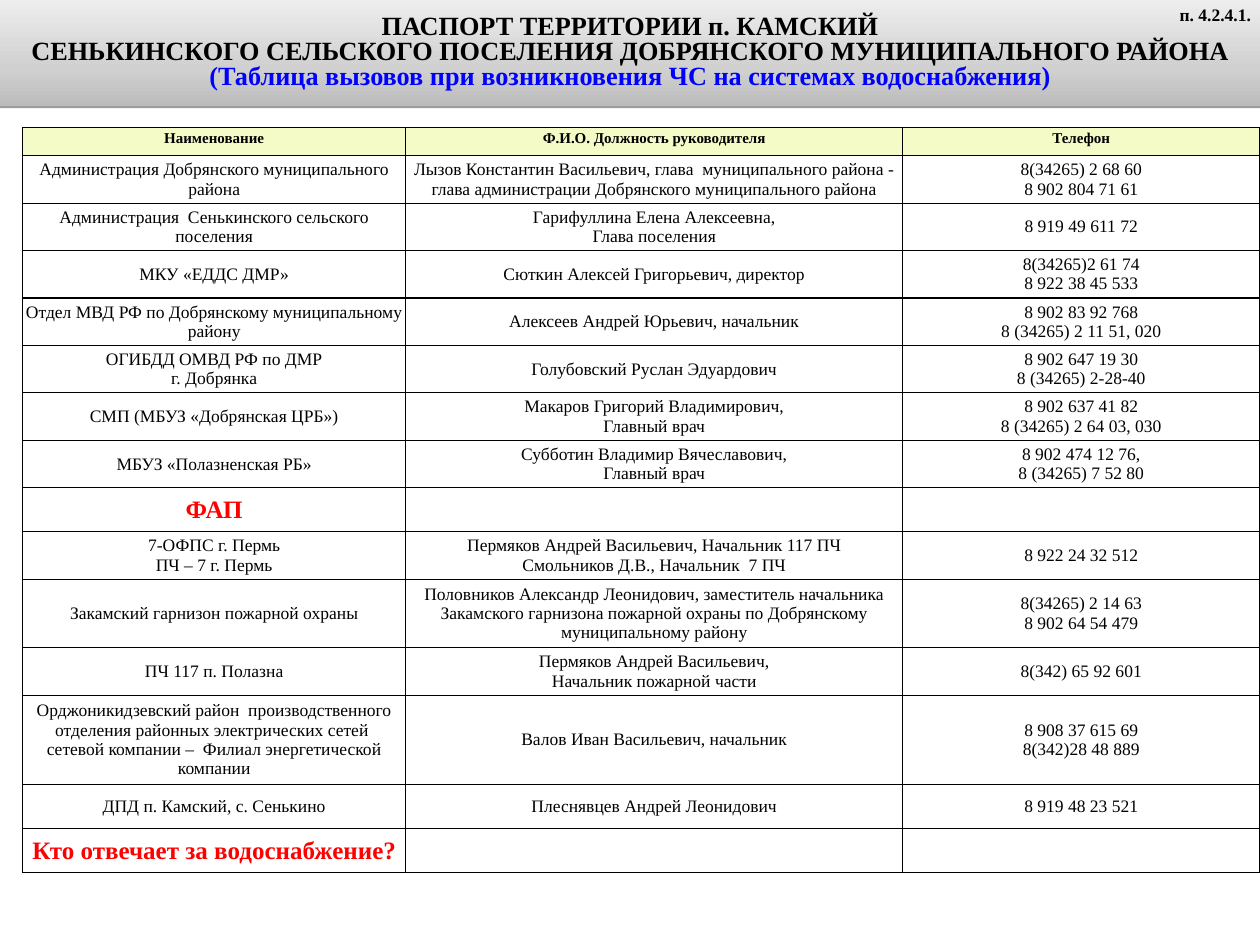
from typing import NamedTuple

from lxml import etree
from pptx import Presentation
from pptx import util as u
from pptx.dml.color import RGBColor
from pptx.enum import text
from pptx.oxml import parse_xml

FONT = "Times New Roman"
COLORS = {
    "black": "000000", "blue": "0000FF", "red": "FF0000", "header": "F4FBC7",
    "band_dark": "BCBCBC", "band_mid": "D0D0D0", "band_light": "EDEDED",
}
DRAWING_NS = "http://schemas.openxmlformats.org/drawingml/2006/main"
NS = f'xmlns:a="{DRAWING_NS}"'


class Style(NamedTuple):
    size: float
    bold: bool = False
    color: str = "black"


class Contact(NamedTuple):
    """One table row; a line break in a field starts a new paragraph."""
    name: str
    head: str = ""
    phone: str = ""
    height: float = 0.49
    style: Style = Style(14)


HEADING = Style(21, True)
SUBHEADING = Style(21, True, "blue")
SECTION_TAG = Style(14, True)
TABLE_HEAD = Style(12, True)
OPEN_QUESTION = Style(20, True, "red")

TITLE_LINES = [
    ("ПАСПОРТ ТЕРРИТОРИИ п. КАМСКИЙ", HEADING),
    ("СЕНЬКИНСКОГО СЕЛЬСКОГО ПОСЕЛЕНИЯ ДОБРЯНСКОГО МУНИЦИПАЛЬНОГО РАЙОНА", HEADING),
    ("(Таблица вызовов при возникновения ЧС на системах водоснабжения)", SUBHEADING),
]
COLUMN_WIDTHS = [4.26, 5.52, 3.97]
CONTACTS = [
    Contact("Наименование", "Ф.И.О. Должность руководителя", "Телефон", 0.31, TABLE_HEAD),
    Contact("Администрация Добрянского муниципального района",
            "Лызов Константин Васильевич, глава  муниципального района - "
            "глава администрации Добрянского муниципального района",
            "8(34265) 2 68 60\n8 902 804 71 61"),
    Contact("Администрация  Сенькинского сельского поселения",
            "Гарифуллина Елена Алексеевна,\nГлава поселения", "8 919 49 611 72"),
    Contact("МКУ «ЕДДС ДМР»", "Сюткин Алексей Григорьевич, директор",
            "8(34265)2 61 74\n8 922 38 45 533"),
    Contact("Отдел МВД РФ по Добрянскому муниципальному району",
            "Алексеев Андрей Юрьевич, начальник",
            "8 902 83 92 768\n8 (34265) 2 11 51, 020"),
    Contact("ОГИБДД ОМВД РФ по ДМР\nг. Добрянка", "Голубовский Руслан Эдуардович",
            "8 902 647 19 30\n8 (34265) 2-28-40"),
    Contact("СМП (МБУЗ «Добрянская ЦРБ»)", "Макаров Григорий Владимирович,\nГлавный врач",
            "8 902 637 41 82\n8 (34265) 2 64 03, 030"),
    Contact("МБУЗ «Полазненская РБ»", "Субботин Владимир Вячеславович,\nГлавный врач",
            "8 902 474 12 76,\n8 (34265) 7 52 80"),
    Contact("ФАП", style=OPEN_QUESTION),
    Contact("7-ОФПС г. Пермь\nПЧ – 7 г. Пермь",
            "Пермяков Андрей Васильевич, Начальник 117 ПЧ\nСмольников Д.В., Начальник  7 ПЧ",
            "8 922 24 32 512"),
    Contact("Закамский гарнизон пожарной охраны",
            "Половников Александр Леонидович, заместитель начальника Закамского "
            "гарнизона пожарной охраны по Добрянскому муниципальному району",
            "8(34265) 2 14 63\n8 902 64 54 479", 0.53),
    Contact("ПЧ 117 п. Полазна", "Пермяков Андрей Васильевич,\nНачальник пожарной части",
            "8(342) 65 92 601"),
    Contact("Орджоникидзевский район  производственного отделения районных "
            "электрических сетей  сетевой компании –  Филиал энергетической компании",
            "Валов Иван Васильевич, начальник", "8 908 37 615 69\n8(342)28 48 889", 0.7),
    Contact("ДПД п. Камский, с. Сенькино", "Плеснявцев Андрей Леонидович", "8 919 48 23 521"),
    Contact("Кто отвечает за водоснабжение?", style=OPEN_QUESTION),
]


def write_lines(frame, lines: list[tuple[str, Style]],
                align=text.PP_ALIGN.CENTER, spacing: float = 1.0) -> None:
    for index, (words, style) in enumerate(lines):
        paragraph = frame.add_paragraph() if index else frame.paragraphs[0]
        paragraph.alignment = align
        paragraph.line_spacing = spacing
        run = paragraph.add_run()
        run.text = words
        run.font.name = FONT
        run.font.size = u.Pt(style.size)
        run.font.bold = style.bold
        run.font.color.rgb = RGBColor.from_string(COLORS[style.color])


def place(shape, left: float, top: float, width: float, height: float) -> None:
    shape.left, shape.top = u.Inches(left), u.Inches(top)
    shape.width, shape.height = u.Inches(width), u.Inches(height)


def paint_band(shape) -> None:
    """Give the heading its grey gradient and thin shadow below."""
    stops = "".join(
        f'<a:gs pos="{position * 1000}"><a:srgbClr val="{COLORS[name]}"/></a:gs>'
        for position, name in [(0, "band_dark"), (35, "band_mid"), (100, "band_light")])
    parts = [
        f'<a:prstGeom {NS} prst="rect"><a:avLst/></a:prstGeom>',
        f'<a:gradFill {NS}><a:gsLst>{stops}</a:gsLst><a:lin ang="16200000"/></a:gradFill>',
        f'<a:effectLst {NS}><a:outerShdw blurRad="0" dist="{u.Pt(1.6)}" dir="5400000">'
        f'<a:srgbClr val="{COLORS["black"]}"><a:alpha val="38000"/></a:srgbClr>'
        '</a:outerShdw></a:effectLst>',
    ]
    for part in parts:
        shape.element.spPr.append(parse_xml(part))


def add_borders(cell) -> None:
    properties = cell._tc.get_or_add_tcPr()
    for index, side in enumerate("LRTB"):
        line = etree.fromstring(
            f'<a:ln{side} {NS} w="{u.Pt(1)}"><a:solidFill>'
            f'<a:srgbClr val="{COLORS["black"]}"/></a:solidFill></a:ln{side}>')
        properties.insert(index, line)


def fill_cell(cell, words: str, style: Style) -> None:
    is_head = style == TABLE_HEAD
    cell.margin_left = cell.margin_right = u.Inches(0.03)
    cell.margin_top = cell.margin_bottom = u.Inches(0.03)
    cell.vertical_anchor = text.MSO_ANCHOR.TOP if is_head else text.MSO_ANCHOR.MIDDLE
    if is_head:
        cell.fill.solid()
        cell.fill.fore_color.rgb = RGBColor.from_string(COLORS["header"])
    else:
        cell.fill.background()
    add_borders(cell)
    if words:
        write_lines(cell.text_frame, [(line, style) for line in words.split("\n")])


def add_contact_table(slide) -> None:
    frame = slide.shapes.add_table(
        len(CONTACTS), len(COLUMN_WIDTHS), u.Inches(0.25), u.Inches(1.42),
        u.Inches(sum(COLUMN_WIDTHS)), u.Inches(sum(c.height for c in CONTACTS)))
    table = frame.table
    table.first_row = table.horz_banding = False
    for column, width in zip(table.columns, COLUMN_WIDTHS):
        column.width = u.Inches(width)
    for row, contact in zip(table.rows, CONTACTS):
        row.height = u.Inches(contact.height)
        for cell, words in zip(row.cells, (contact.name, contact.head, contact.phone)):
            fill_cell(cell, words, contact.style)


def main() -> None:
    deck = Presentation()
    deck.slide_width, deck.slide_height = u.Inches(14), u.Inches(10.5)
    slide = deck.slides.add_slide(deck.slide_layouts[5])

    heading = slide.shapes.title
    place(heading, 0, 0, 14, 1.18)
    paint_band(heading)
    heading.text_frame.auto_size = text.MSO_AUTO_SIZE.NONE
    heading.text_frame.vertical_anchor = text.MSO_ANCHOR.MIDDLE
    write_lines(heading.text_frame, TITLE_LINES, spacing=0.8)

    section = slide.shapes.add_textbox(
        u.Inches(12.94), u.Inches(0), u.Inches(1.06), u.Inches(0.34))
    section.text_frame.word_wrap = True
    write_lines(section.text_frame, [("п. 4.2.4.1.", SECTION_TAG)], text.PP_ALIGN.RIGHT)

    add_contact_table(slide)
    deck.save("out.pptx")


if __name__ == "__main__":
    main()
